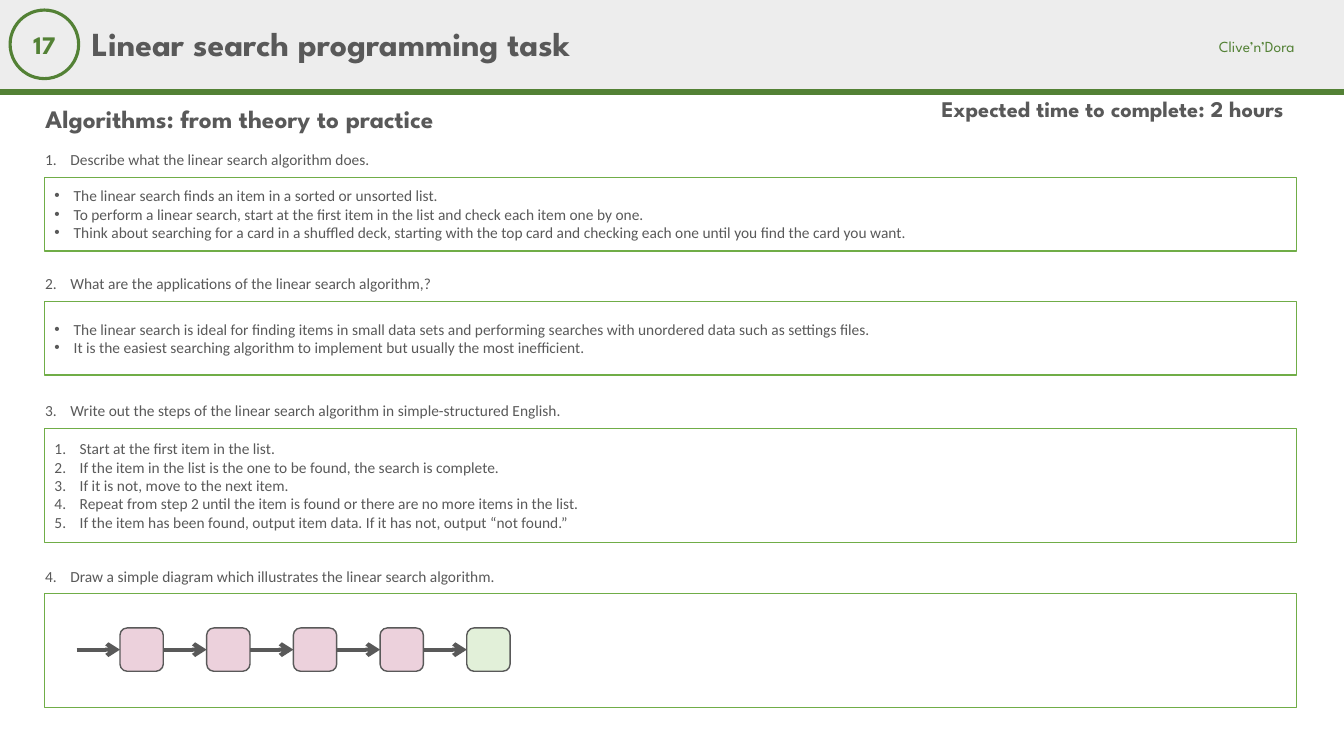
from lxml.etree import SubElement
from pptx import Presentation
from pptx.dml.color import RGBColor
from pptx.enum.shapes import MSO_CONNECTOR, MSO_SHAPE
from pptx.enum.text import MSO_ANCHOR, MSO_AUTO_SIZE, PP_ALIGN
from pptx.oxml.ns import qn
from pptx.util import Inches, Pt

# Content
TITLE = "Linear search programming task"
TOPIC = "Algorithms: from theory to practice"
TIME = "Expected time to complete: 2 hours"
MAKER = "Clive’n’Dora"
NUMBER = "17"

# Question, top of its answer box, box height, list style, answers
TASKS = [
    ("Describe what the linear search algorithm does.", 1.76, 0.73, "dot", [
        "The linear search finds an item in a sorted or unsorted list.",
        "To perform a linear search, start at the first item in the list and check each item one by one.",
        "Think about searching for a card in a shuffled deck, starting with the top card "
        "and checking each one until you find the card you want.",
    ]),
    ("What are the applications of the linear search algorithm,?", 2.99, 0.73, "dot", [
        "The linear search is ideal for finding items in small data sets and performing "
        "searches with unordered data such as settings files.",
        "It is the easiest searching algorithm to implement but usually the most inefficient.",
    ]),
    ("Write out the steps of the linear search algorithm in simple-structured English.", 4.25, 1.13, "number", [
        "Start at the first item in the list.",
        "If the item in the list is the one to be found, the search is complete.",
        "If it is not, move to the next item.",
        "Repeat from step 2 until the item is found or there are no more items in the list.",
        "If the item has been found, output item data. If it has not, output “not found.”",
    ]),
    ("Draw a simple diagram which illustrates the linear search algorithm.", 5.89, 1.13, None, []),
]

GREY = RGBColor(0x59, 0x59, 0x59)
PALE = RGBColor(0xED, 0xED, 0xED)
GREEN = RGBColor(0x53, 0x81, 0x35)
LIME = RGBColor(0x70, 0xAD, 0x47)
PINK = RGBColor(0xEC, 0xD1, 0xDC)
MINT = RGBColor(0xE2, 0xF0, 0xD9)
CELLS = [PINK] * 4 + [MINT]
HEAD = "League Spartan"
BODY = "Calibri"


def text(shape, lines, size=11, font=BODY, color=GREY, bold=False, align=PP_ALIGN.LEFT,
         anchor=MSO_ANCHOR.MIDDLE, space=1.0, wrap=True, style=None, start=1):
    frame = shape.text_frame
    frame.auto_size = MSO_AUTO_SIZE.NONE
    frame.word_wrap = wrap
    frame.vertical_anchor = anchor
    for i, line in enumerate(lines):
        para = frame.paragraphs[0] if i == 0 else frame.add_paragraph()
        props = para._p.get_or_add_pPr()
        indent = Inches({"dot": 0.19, "number": 0.25}.get(style, 0))
        props.set("marL", str(indent))
        props.set("indent", str(-indent))
        if style == "dot":
            SubElement(props, qn("a:buFont"), typeface="Arial")
            SubElement(props, qn("a:buChar"), char="•")
        elif style == "number":
            SubElement(props, qn("a:buFont"), typeface="+mj-lt")
            SubElement(props, qn("a:buAutoNum"), type="arabicPeriod", startAt=str(start))
        else:
            SubElement(props, qn("a:buNone"))
        para.alignment = align
        para.line_spacing = space
        para.space_before = para.space_after = Pt(0)
        run = para.add_run()
        run.text = line
        run.font.size = Pt(size)
        run.font.name = font
        run.font.bold = bold
        run.font.color.rgb = color


def place(shape, *box):
    shape.left, shape.top, shape.width, shape.height = map(Inches, box)
    return shape


def label(*box):
    return slide.shapes.add_textbox(*map(Inches, box))


def block(kind, *box, fill=None, line=None, width=1):
    shape = slide.shapes.add_shape(kind, *map(Inches, box))
    shape.shadow.inherit = False
    if fill is None:
        shape.fill.background()
    else:
        shape.fill.solid()
        shape.fill.fore_color.rgb = fill
    if line is None:
        shape.line.fill.background()
    else:
        edge(shape, line, width)
    return shape


def edge(shape, color, width):
    shape.line.color.rgb = color
    shape.line.width = Pt(width)


def wire(x1, y1, x2, y2, color, width):
    link = slide.shapes.add_connector(MSO_CONNECTOR.STRAIGHT, *map(Inches, (x1, y1, x2, y2)))
    edge(link, color, width)
    SubElement(link._element.spPr, qn("a:effectLst"))
    return link


deck = Presentation()
deck.slide_width, deck.slide_height = Inches(13.33), Inches(7.5)
slide = deck.slides.add_slide(deck.slide_layouts[4])
title, topic, *lists = [p for p in slide.placeholders if p.placeholder_format.idx < 5]

# Header band, behind the title
band = block(MSO_SHAPE.RECTANGLE, 0, 0, 13.33, 0.91, fill=PALE)
slide.shapes._spTree.insert(2, band._element)
wire(0, 0.91, 13.33, 0.91, GREEN, 4.5)
text(place(title, 0.81, 0.09, 10.31, 0.73), [TITLE], size=24, font=HEAD, bold=True, space=0.9)
badge = block(MSO_SHAPE.OVAL, 0.1, 0.1, 0.68, 0.68, line=GREEN, width=2.25)
badge.text_frame.margin_left = badge.text_frame.margin_right = 0
text(badge, [NUMBER], size=18, font=HEAD, color=GREEN, bold=True, align=PP_ALIGN.CENTER)
text(label(11.99, 0.31, 1.22, 0.29), [MAKER], font=HEAD, color=GREEN, wrap=False)

# Topic and time
text(place(topic, 0.35, 0.99, 8.43, 0.4), [TOPIC], size=18, font=HEAD, bold=True, space=0.9)
text(label(9.24, 0.93, 4.09, 0.4), [TIME], size=16, font=HEAD, bold=True,
     anchor=MSO_ANCHOR.TOP, space=0.9)

# Questions and answer boxes
for i, (ask, top, high, style, lines) in enumerate(TASKS):
    text(label(0.35, top - 0.32, 6.67, 0.29), [ask], style="number", start=i + 1)
    box = (0.44, top, 12.42, high)
    if lines:
        answer = place(lists[i], *box)
        edge(answer, LIME, 1)
        text(answer, lines, style=style)
    else:
        block(MSO_SHAPE.RECTANGLE, *box, line=LIME)

# Search diagram: cells and gaps have equal width
SIDE, LEFT, TOP = 0.43, 1.19, 6.23
prev = None
for i, fill in enumerate(CELLS):
    x, mid = LEFT + 2 * SIDE * i, TOP + SIDE / 2
    cell = block(MSO_SHAPE.ROUNDED_RECTANGLE, x, TOP, SIDE, SIDE, fill=fill, line=GREY)
    arrow = wire(x - SIDE, mid, x, mid, GREY, 3)
    SubElement(arrow.line._get_or_add_ln(), qn("a:tailEnd"), type="arrow")
    if prev is not None:
        arrow.begin_connect(prev, 3)
    arrow.end_connect(cell, 1)
    prev = cell

deck.save("out.pptx")
